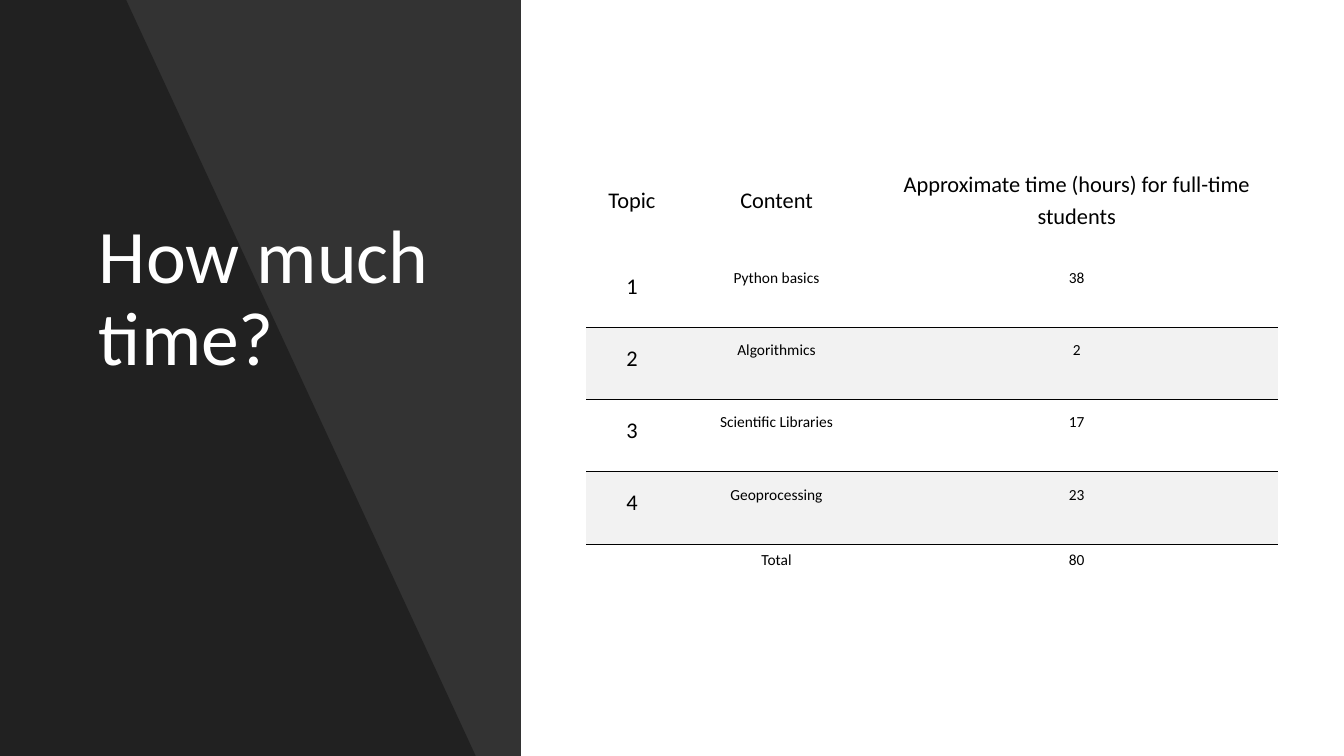
"""Build a slide with a course time table beside a dark title panel."""
import dataclasses

import pptx
import pptx.dml.color
import pptx.enum.shapes
import pptx.enum.text
import pptx.oxml
import pptx.oxml.ns
import pptx.util

Cm = pptx.util.Cm
Pt = pptx.util.Pt
RGB = pptx.dml.color.RGBColor
ANCHOR = pptx.enum.text.MSO_ANCHOR
ALIGN = pptx.enum.text.PP_ALIGN
qn = pptx.oxml.ns.qn


@dataclasses.dataclass(frozen=True)
class Theme:
    font: str = "Calibri"
    ink: RGB = RGB(0, 0, 0)
    paper: RGB = RGB(255, 255, 255)
    band: RGB = RGB(0xF2, 0xF2, 0xF2)
    title_size: Pt = Pt(54)
    label_size: Pt = Pt(16)
    body_size: Pt = Pt(11)
    rule_width: Pt = Pt(0.75)


THEME = Theme()
SLIDE_WIDTH, SLIDE_HEIGHT = Cm(33.87), Cm(19.05)
PLAIN_TABLE_STYLE = "{2D5ABB26-0587-4C30-8999-92F81FD0307C}"
COLUMN_WIDTHS = (2.29, 5.0, 10.13)
ROW_HEIGHTS = (2.59, 1.82, 1.82, 1.82, 1.82, 1.57)
SCHEDULE = (
    ("Topic", "Content", "Approximate time (hours) for full-time students"),
    ("1", "Python basics", "38"),
    ("2", "Algorithmics", "2"),
    ("3", "Scientific Libraries", "17"),
    ("4", "Geoprocessing", "23"),
    ("", "Total", "80"),
)


def xml(markup):
    return pptx.oxml.parse_xml(markup.replace(" ", f" {pptx.oxml.ns.nsdecls('a')} ", 1))


def shade(panel, opacity):
    panel.shadow.inherit = False
    panel.line.fill.background()
    panel.fill.solid()
    panel.fill.fore_color.rgb = THEME.ink
    colour = panel.element.spPr.find(qn("a:solidFill"))[0]
    colour.append(xml(f'<a:alpha val="{opacity * 1000}"/>'))


def add_title_panel(slide):
    panel = slide.shapes.add_shape(
        pptx.enum.shapes.MSO_SHAPE.RECTANGLE, 0, 0, Cm(13.13), SLIDE_HEIGHT)
    shade(panel, 80)
    outline = slide.shapes.build_freeform(0, 0)
    outline.add_line_segments(
        [(Cm(3.18), 0), (Cm(11.99), SLIDE_HEIGHT), (0, SLIDE_HEIGHT)], close=True)
    shade(outline.convert_to_shape(), 35)


def set_title(slide, text):
    title = slide.shapes.title
    title.element.getparent().append(title.element)
    title.left, title.top, title.width, title.height = Cm(2.24), Cm(3.12), Cm(9.19), Cm(6.63)
    frame = title.text_frame
    frame.text = text
    frame.word_wrap = True
    frame.auto_size = pptx.enum.text.MSO_AUTO_SIZE.NONE
    frame.vertical_anchor = ANCHOR.BOTTOM
    paragraph = frame.paragraphs[0]
    paragraph.alignment = ALIGN.LEFT
    paragraph.line_spacing = 0.9
    set_font(paragraph, THEME.title_size, THEME.paper)


def set_font(paragraph, size, colour):
    paragraph.font.name = THEME.font
    paragraph.font.size = size
    paragraph.font.color.rgb = colour


def add_rule(cell, side):
    cell._tc.get_or_add_tcPr().insert(0, xml(
        f'<a:{side} w="{THEME.rule_width}"><a:solidFill><a:srgbClr val="{THEME.ink}"/>'
        f'</a:solidFill></a:{side}>'))


def fill_cell(cell, text, row, column):
    header, total = row == 0, row == len(SCHEDULE) - 1
    banded = row in (2, 4)
    if not header and not total:
        add_rule(cell, "lnT" if banded else "lnB")
    if banded:
        cell.fill.solid()
        cell.fill.fore_color.rgb = THEME.band
    else:
        cell.fill.background()
    cell.margin_left = cell.margin_right = 0
    cell.margin_top, cell.margin_bottom = Cm(0.08 if header else 0.1), Cm(0.33)
    cell.margin_left, cell.margin_right = Cm(0), Cm(0)
    cell.vertical_anchor = ANCHOR.MIDDLE if header else ANCHOR.TOP
    if text:
        cell.text = text
    paragraph = cell.text_frame.paragraphs[0]
    paragraph.alignment = ALIGN.CENTER
    paragraph.line_spacing = 1.15 if header or total else 1.5
    paragraph.space_after = Pt(8)
    label = header or column == 0
    set_font(paragraph, THEME.label_size if label else THEME.body_size, THEME.ink)


def add_schedule(slide):
    frame = slide.shapes.add_table(
        len(SCHEDULE), len(COLUMN_WIDTHS), Cm(14.78), Cm(3.84),
        Cm(sum(COLUMN_WIDTHS)), Cm(sum(ROW_HEIGHTS)))
    schedule = frame.table
    schedule.first_row = schedule.horz_banding = False
    next(frame.element.iter(qn("a:tableStyleId"))).text = PLAIN_TABLE_STYLE
    for column, width in zip(schedule.columns, COLUMN_WIDTHS):
        column.width = Cm(width)
    for row, height in zip(schedule.rows, ROW_HEIGHTS):
        row.height = Cm(height)
    for row, entries in enumerate(SCHEDULE):
        for column, text in enumerate(entries):
            fill_cell(schedule.cell(row, column), text, row, column)


def main():
    deck = pptx.Presentation()
    deck.slide_width, deck.slide_height = SLIDE_WIDTH, SLIDE_HEIGHT
    slide = deck.slides.add_slide(deck.slide_layouts.get_by_name("Title Only"))
    slide.background.fill.solid()
    slide.background.fill.fore_color.rgb = THEME.paper
    add_title_panel(slide)
    set_title(slide, "How much time?")
    add_schedule(slide)
    deck.save("out.pptx")


if __name__ == "__main__":
    main()
